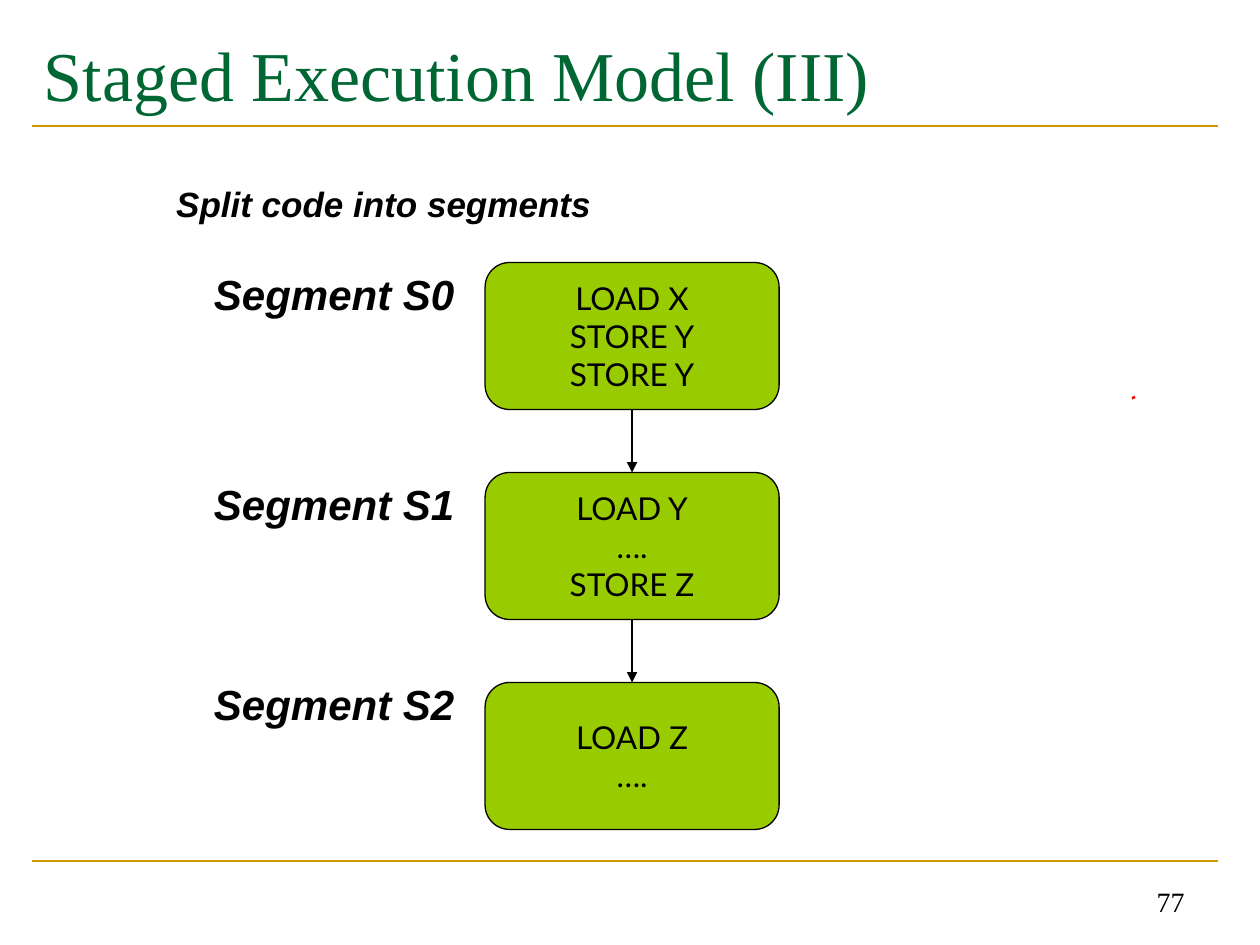
"""Builds the slide on a staged execution model split into three code segments."""
import lxml.etree
import pptx
import pptx.util
import pptx.dml.color
import pptx.enum.shapes
import pptx.enum.text
import pptx.oxml.ns

TITLE = "Staged Execution Model (III)"
SUBTITLE = "Split code into segments"
PAGE = "77"
SEGMENTS = [
    ("Segment S0", ["LOAD X", "STORE Y", "STORE Y"], 25),
    ("Segment S1", ["LOAD Y", "….", "STORE Z"], 45),
    ("Segment S2", ["LOAD Z", "…."], 64),
]
COLORS = {"title": "006633", "rule": "CC9900", "box": "99CC00",
          "ink": "000000", "mark": "FF0000"}
COLS, ROWS = 120, 90
BOX_X, BOX_Y, BOX_W, BOX_H, PITCH = 46.2, 25, 28, 14, 20

SHAPE = pptx.enum.shapes.MSO_SHAPE
ALIGN = pptx.enum.text.PP_ALIGN
ANCHOR = pptx.enum.text.MSO_ANCHOR

prs = pptx.Presentation()
prs.slide_width = pptx.util.Inches(10)
prs.slide_height = pptx.util.Inches(7.5)
s = prs.slides.add_slide(prs.slide_layouts[6])


def x(col):
    return round(prs.slide_width * col / COLS)


def y(row):
    return round(prs.slide_height * row / ROWS)


def rgb(name):
    return pptx.dml.color.RGBColor.from_string(COLORS[name])


def write(sp, text, size=18, font="Arial", color="ink", bold=False, italic=False,
          align=ALIGN.LEFT, anchor=ANCHOR.TOP, wrap=True):
    tf = sp.text_frame
    tf.word_wrap = wrap
    tf.vertical_anchor = anchor
    tf.text = text
    for p in tf.paragraphs:
        p.alignment = align
        for r in p.runs:
            r.font.size = pptx.util.Pt(size)
            r.font.name = font
            r.font.bold = bold
            r.font.italic = italic
            r.font.color.rgb = rgb(color)


def textbox(col, row, width, height, text, **style):
    write(s.shapes.add_textbox(x(col), y(row), x(width), y(height)), text, **style)


def add_xml(parent, tag, **attributes):
    lxml.etree.SubElement(parent, pptx.oxml.ns.qn(tag), **attributes)


def line(x1, y1, x2, y2, color="ink", width=0.75):
    sp = s.shapes.add_connector(pptx.enum.shapes.MSO_CONNECTOR.STRAIGHT,
                                x(x1), y(y1), x(x2), y(y2))
    sp.line.color.rgb = rgb(color)
    sp.line.width = pptx.util.Pt(width)
    add_xml(sp._element.spPr, "a:effectLst")
    return sp


def box(row, text):
    sp = s.shapes.add_shape(SHAPE.ROUNDED_RECTANGLE, x(BOX_X), y(row), x(BOX_W), y(BOX_H))
    sp.shadow.inherit = False
    sp.fill.solid()
    sp.fill.fore_color.rgb = rgb("box")
    sp.line.color.rgb = rgb("ink")
    sp.line.width = pptx.util.Pt(0.75)
    write(sp, text, font="Lato", align=ALIGN.CENTER, anchor=ANCHOR.MIDDLE, wrap=False)
    return sp


for row in (82, 12):
    line(3, row, 116, row, "rule", 1.5)
textbox(86, 82, 28, 6, PAGE, size=16, font="Times New Roman",
        align=ALIGN.RIGHT, anchor=ANCHOR.BOTTOM)
textbox(3, 2, 113, 10, TITLE, size=40, font="Times New Roman", color="title",
        anchor=ANCHOR.MIDDLE)
textbox(15.6, 16.8, 97.2, 5.2, SUBTITLE, size=20, bold=True, italic=True)

boxes = []
for i, (label, code, label_row) in enumerate(SEGMENTS):
    boxes.append(box(BOX_Y + i * PITCH, "\n".join(code)))
    textbox(19.2, label_row, 30, 6, label, size=24, bold=True, italic=True)

mid = BOX_X + BOX_W / 2
for i, (upper, lower) in enumerate(zip(boxes, boxes[1:])):
    top = BOX_Y + i * PITCH
    arrow = line(mid, top + BOX_H, mid, top + PITCH)
    arrow.begin_connect(upper, 2)
    arrow.end_connect(lower, 0)
    add_xml(arrow.line._get_or_add_ln(), "a:tailEnd", type="triangle")

fb = s.shapes.build_freeform(x(108.1), y(37.8))
fb.add_line_segments([(x(107.9), y(37.9)), (x(107.8), y(37.9))], close=False)
mark = fb.convert_to_shape()
mark.shadow.inherit = False
mark.fill.background()
mark.line.color.rgb = rgb("mark")
mark.line.width = pptx.util.Pt(1.5)

prs.save("out.pptx")
